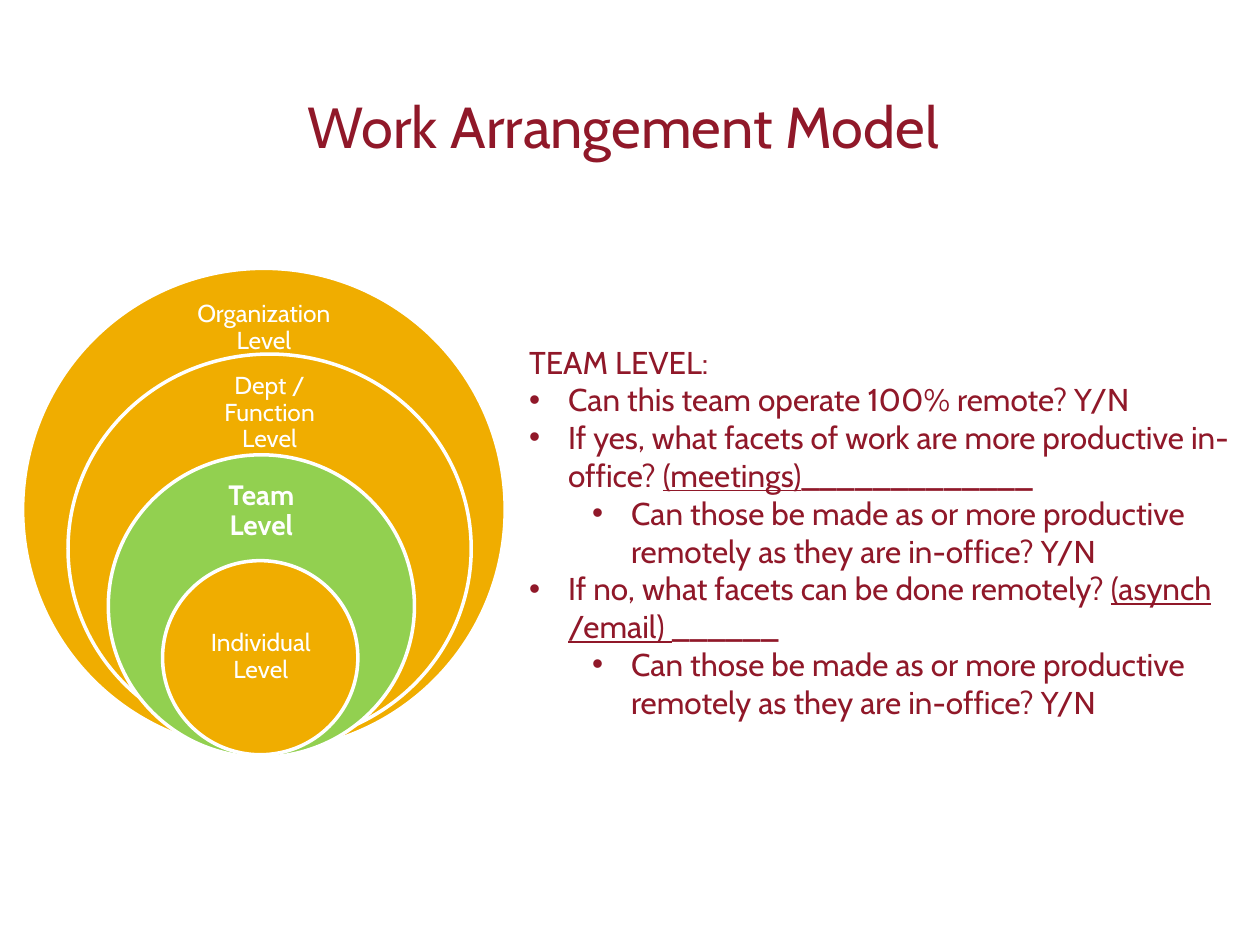
"""Build the Work Arrangement Model slide."""
from dataclasses import dataclass

from lxml.etree import SubElement
from pptx import Presentation
from pptx.dml.color import RGBColor
from pptx.enum.shapes import MSO_SHAPE
from pptx.enum.text import MSO_ANCHOR, PP_ALIGN
from pptx.oxml.ns import qn
from pptx.util import Inches, Pt

FONT = "Cabin"
MAROON, GOLD, GREEN, WHITE = "901829", "F0AD00", "92D050", "FFFFFF"
HANGING = 0.31
Box = tuple[float, float, float, float]


@dataclass
class Level:
    label: str
    circle: Box
    label_box: Box
    side_inset: float = 0.11
    end_inset: float = 0.11
    fill: str = GOLD
    size: int = 14
    bold: bool = False


@dataclass
class Line:
    before: str
    underlined: str = ""
    after: str = ""
    margin: float = HANGING
    bulleted: bool = True
    depth: int = 0


FOLLOW_UP = Line("Can those be made as or more productive remotely as they are in-office? Y/N",
                 margin=0.81, depth=1)
LEVELS = [
    Level("Organization Level", (0.18, 2.13, 3.83, 3.83), (1.56, 2.32, 1.07, 0.57), side_inset=0),
    Level("Dept / Function Level", (0.54, 2.81, 3.2, 3.09), (1.58, 3, 1.12, 0.56)),
    Level("Team Level", (0.86, 3.61, 2.43, 2.4), (1.51, 3.79, 1.13, 0.54),
          0.12, 0.12, GREEN, 16, True),
    Level("Individual Level", (1.29, 4.45, 1.55, 1.54), (1.52, 4.83, 1.1, 0.77)),
]
LINES = [
    Line("TEAM LEVEL:", margin=0, bulleted=False),
    Line("Can this team operate 100% remote? Y/N"),
    Line("If yes, what facets of work are more productive in-office? ", "(meetings)", "_" * 13),
    FOLLOW_UP,
    Line("If no, what facets can be done remotely? ", "(asynch /email) ", "_" * 6),
    FOLLOW_UP,
]


def color(value: str) -> RGBColor:
    """Turn a hex string into a colour."""
    return RGBColor.from_string(value)


def set_font(font, size: float, value: str, bold: bool = False) -> None:
    """Apply the slide typeface with a size and colour."""
    font.name, font.size, font.bold = FONT, Pt(size), bold
    font.color.rgb = color(value)


def add_text_frame(slide, box: Box, anchor=MSO_ANCHOR.MIDDLE):
    """Add a wrapping text box and return its text frame."""
    text_frame = slide.shapes.add_textbox(*map(Inches, box)).text_frame
    text_frame.word_wrap = True
    text_frame.vertical_anchor = anchor
    return text_frame


def add_centered_text(slide, box: Box, text: str, size: float, value: str, bold: bool = False):
    """Add one centred paragraph and return its text frame."""
    text_frame = add_text_frame(slide, box)
    text_frame.text = text
    paragraph = text_frame.paragraphs[0]
    paragraph.alignment = PP_ALIGN.CENTER
    set_font(paragraph.runs[0].font, size, value, bold)
    return text_frame


def add_level(slide, level: Level) -> None:
    """Draw one circle of the model with its label."""
    shape = slide.shapes.add_shape(MSO_SHAPE.OVAL, *map(Inches, level.circle))
    shape.shadow.inherit = False
    shape.fill.solid()
    shape.fill.fore_color.rgb = color(level.fill)
    shape.line.color.rgb = color(WHITE)
    shape.line.width = Pt(2)
    text_frame = add_centered_text(slide, level.label_box, level.label, level.size, WHITE, level.bold)
    text_frame.margin_left = text_frame.margin_right = Inches(level.side_inset)
    text_frame.margin_top = text_frame.margin_bottom = Inches(level.end_inset)
    text_frame.paragraphs[0].line_spacing = 0.9


def add_bullet(paragraph, margin: float) -> None:
    """Give a paragraph a hanging bullet."""
    properties = paragraph._p.get_or_add_pPr()
    properties.set("marL", str(Inches(margin)))
    properties.set("indent", str(-Inches(HANGING)))
    SubElement(properties, qn("a:buFont"), typeface="Arial")
    SubElement(properties, qn("a:buChar"), char="•")


def add_questions(slide, box: Box, lines: list[Line]) -> None:
    """Write the heading and the bulleted questions."""
    text_frame = add_text_frame(slide, box, MSO_ANCHOR.TOP)
    for index, line in enumerate(lines):
        paragraph = text_frame.add_paragraph() if index else text_frame.paragraphs[0]
        paragraph.level = line.depth
        if line.bulleted:
            add_bullet(paragraph, line.margin)
        for text in filter(None, (line.before, line.underlined, line.after)):
            run = paragraph.add_run()
            run.text = text
            set_font(run.font, 18, MAROON)
            run.font.underline = text == line.underlined


def main() -> None:
    """Create and save the presentation."""
    presentation = Presentation()
    presentation.slide_width, presentation.slide_height = Inches(10), Inches(7.5)
    slide = presentation.slides.add_slide(presentation.slide_layouts[6])
    add_centered_text(slide, (0.5, 0.37, 9, 1.25), "Work Arrangement Model ", 33, MAROON)
    for level in LEVELS:
        add_level(slide, level)
    add_questions(slide, (4.1, 2.67, 6.29, 3.13), LINES)
    presentation.save("out.pptx")


if __name__ == "__main__":
    main()
